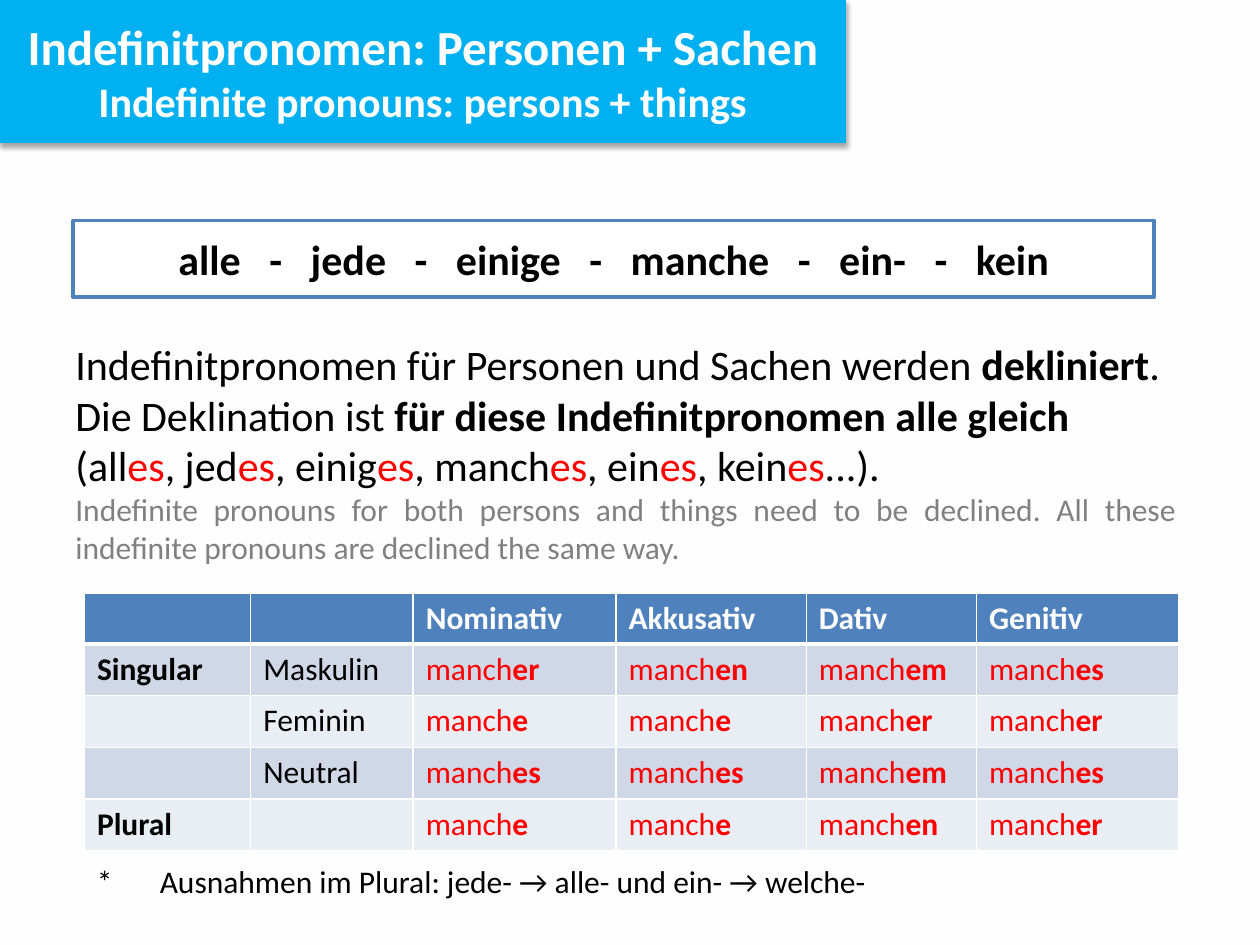
from dataclasses import dataclass

from lxml.etree import SubElement
from pptx import Presentation
from pptx.dml.color import RGBColor
from pptx.enum.shapes import MSO_SHAPE
from pptx.enum.text import MSO_ANCHOR, PP_ALIGN
from pptx.oxml import parse_xml
from pptx.oxml.ns import nsdecls, qn
from pptx.util import Inches, Pt

WIDTH, HEIGHT = Inches(10), Inches(7.5)
FONT = "Calibri"
COLORS = {
    "page": "FEFEFE", "white": "FFFFFF", "black": "000000", "grey": "808080",
    "red": "FF0000", "banner": "00B0F0", "blue": "4F81BD",
    "band_dark": "D0D8E8", "band_light": "E9EDF4",
}


@dataclass(frozen=True)
class Area:
    """A rectangle in percent of the slide's width and height."""
    left: float
    top: float
    width: float
    height: float

    def emu(self) -> tuple:
        return (across(self.left), down(self.top),
                across(self.width), down(self.height))


@dataclass(frozen=True)
class Declension:
    number: str
    gender: str
    endings: tuple


BANNER = Area(0, 0, 67.1, 15.07)
WORD_BOX = Area(5.8, 23.33, 85.8, 8.13)
BODY = Area(5, 35.2, 89.4, 12.13)
TABLE = Area(6.7, 62.8, 86.9, 26.93)
NOTE = Area(6.7, 90.53, 89.7, 5.33)

PRONOUNS = ("alle", "jede", "einige", "manche", "ein-", "kein")
STEMS = ("all", "jed", "einig", "manch", "ein", "kein")
HEADINGS = ("", "", "Nominativ", "Akkusativ", "Dativ", "Genitiv")
COLUMNS = (13.2, 12.9, 16.1, 15.1, 13.5, 16.1)
ROWS = (5.07,) + (5.47,) * 4
DECLENSIONS = (
    Declension("Singular", "Maskulin", ("er", "en", "em", "es")),
    Declension("", "Feminin", ("e", "e", "er", "er")),
    Declension("", "Neutral", ("es", "es", "em", "es")),
    Declension("Plural", "", ("e", "e", "en", "er")),
)


def across(share: float) -> int:
    return round(WIDTH * share / 100)


def down(share: float) -> int:
    return round(HEIGHT * share / 100)


def rgb(name: str) -> RGBColor:
    return RGBColor.from_string(COLORS[name])


def write(p, text: str, size: float = 18, color: str = "black",
          bold: bool = False, spacing: float = 0) -> None:
    r = p.add_run()
    r.text = text
    r.font.name, r.font.size, r.font.bold = FONT, Pt(size), bold
    r.font.color.rgb = rgb(color)
    if spacing:
        r.font._element.set("spc", str(round(spacing * 100)))


def add_box(s, area: Area, fill: str, line: str, weight: float):
    sp = s.shapes.add_shape(MSO_SHAPE.RECTANGLE, *area.emu())
    sp.shadow.inherit = False
    sp.fill.solid()
    sp.fill.fore_color.rgb = rgb(fill)
    sp.line.color.rgb = rgb(line)
    sp.line.width = Pt(weight)
    tf = sp.text_frame
    tf.word_wrap = True
    tf.vertical_anchor = MSO_ANCHOR.MIDDLE
    tf.paragraphs[0].alignment = PP_ALIGN.CENTER
    return sp


def add_text(s, area: Area):
    tf = s.shapes.add_textbox(*area.emu()).text_frame
    tf.word_wrap = True
    return tf


def add_shadow(sp) -> None:
    effects = sp._element.spPr.find(qn("a:effectLst"))
    effects.append(parse_xml(
        f'<a:outerShdw {nsdecls("a")} blurRad="{Pt(3.1)}" dist="{Pt(1.8)}" '
        'dir="5400000" rotWithShape="0"><a:srgbClr val="000000">'
        '<a:alpha val="35000"/></a:srgbClr></a:outerShdw>'))


def style_cell(cell, fill: str, top: float, bottom: float) -> None:
    tcPr = cell._tc.get_or_add_tcPr()
    for side, weight in (("L", 1), ("R", 1), ("T", top), ("B", bottom)):
        ln = SubElement(tcPr, qn(f"a:ln{side}"), w=str(Pt(weight)))
        solid = SubElement(ln, qn("a:solidFill"))
        SubElement(solid, qn("a:srgbClr"), val=COLORS["white"])
    cell.fill.solid()
    cell.fill.fore_color.rgb = rgb(fill)


def add_declension_table(s) -> None:
    table = s.shapes.add_table(len(ROWS), len(COLUMNS), *TABLE.emu()).table
    for column, share in zip(table.columns, COLUMNS):
        column.width = across(share)
    for row, share in zip(table.rows, ROWS):
        row.height = down(share)

    # Header row
    for c, heading in enumerate(HEADINGS):
        cell = table.cell(0, c)
        style_cell(cell, "blue", 1, 3)
        if heading:
            write(cell.text_frame.paragraphs[0], heading, color="white", bold=True)

    # Banded rows: labels, then stem and ending for each case
    for r, entry in enumerate(DECLENSIONS, start=1):
        cells = [table.cell(r, c) for c in range(len(COLUMNS))]
        for cell in cells:
            style_cell(cell, "band_dark" if r % 2 else "band_light",
                       3 if r == 1 else 1, 1)
        paragraphs = [cell.text_frame.paragraphs[0] for cell in cells]
        if entry.number:
            write(paragraphs[0], entry.number, bold=True)
        if entry.gender:
            write(paragraphs[1], entry.gender)
        for p, ending in zip(paragraphs[2:], entry.endings):
            write(p, "manch", color="red")
            write(p, ending, color="red", bold=True)


def main() -> None:
    prs = Presentation()
    prs.slide_width, prs.slide_height = WIDTH, HEIGHT
    s = prs.slides.add_slide(prs.slide_layouts[6])
    s.background.fill.solid()
    s.background.fill.fore_color.rgb = rgb("page")

    # Explanation in German and English
    tf = add_text(s, BODY)
    p = tf.paragraphs[0]
    for text, bold in (
        ("Indefinitpronomen für Personen und Sachen werden ", False),
        ("dekliniert", True),
        (". Die Deklination ist ", False),
        ("für diese Indefinitpronomen alle gleich ", True),
    ):
        write(p, text, size=24, bold=bold)
    for i, stem in enumerate(STEMS):
        write(p, (", " if i else "(") + stem, size=24)
        write(p, "es", size=24, color="red")
    write(p, "...).", size=24)
    p = tf.add_paragraph()
    p.alignment = PP_ALIGN.JUSTIFY
    write(p, "Indefinite pronouns for both persons and things need to be declined. "
             "All these indefinite pronouns are declined the same way.", color="grey")

    # Word list, with widened spaces around the dashes
    p = add_box(s, WORD_BOX, "white", "blue", 2).text_frame.paragraphs[0]
    for i, pronoun in enumerate(PRONOUNS):
        if i:
            for text, spacing in ((" ", 10.85), ("-", 0), (" ", 10.85)):
                write(p, text, size=24, bold=True, spacing=spacing)
        write(p, pronoun, size=24, bold=True)

    # Title banner
    banner = add_box(s, BANNER, "banner", "banner", 0.75)
    add_shadow(banner)
    p = banner.text_frame.paragraphs[0]
    write(p, "Indefinitpronomen: Personen + Sachen", size=28, color="white", bold=True)
    p.add_line_break()
    write(p, "Indefinite pronouns: persons + things", size=24, color="white", bold=True)

    add_declension_table(s)

    # Footnote with a tab after the asterisk
    p = add_text(s, NOTE).paragraphs[0]
    tabs = SubElement(p._p.get_or_add_pPr(), qn("a:tabLst"))
    SubElement(tabs, qn("a:tab"), pos=str(Inches(0.5)), algn="l")
    write(p, "*\tAusnahmen im Plural: jede- → alle- und ein- → welche-")

    prs.save("out.pptx")


if __name__ == "__main__":
    main()
